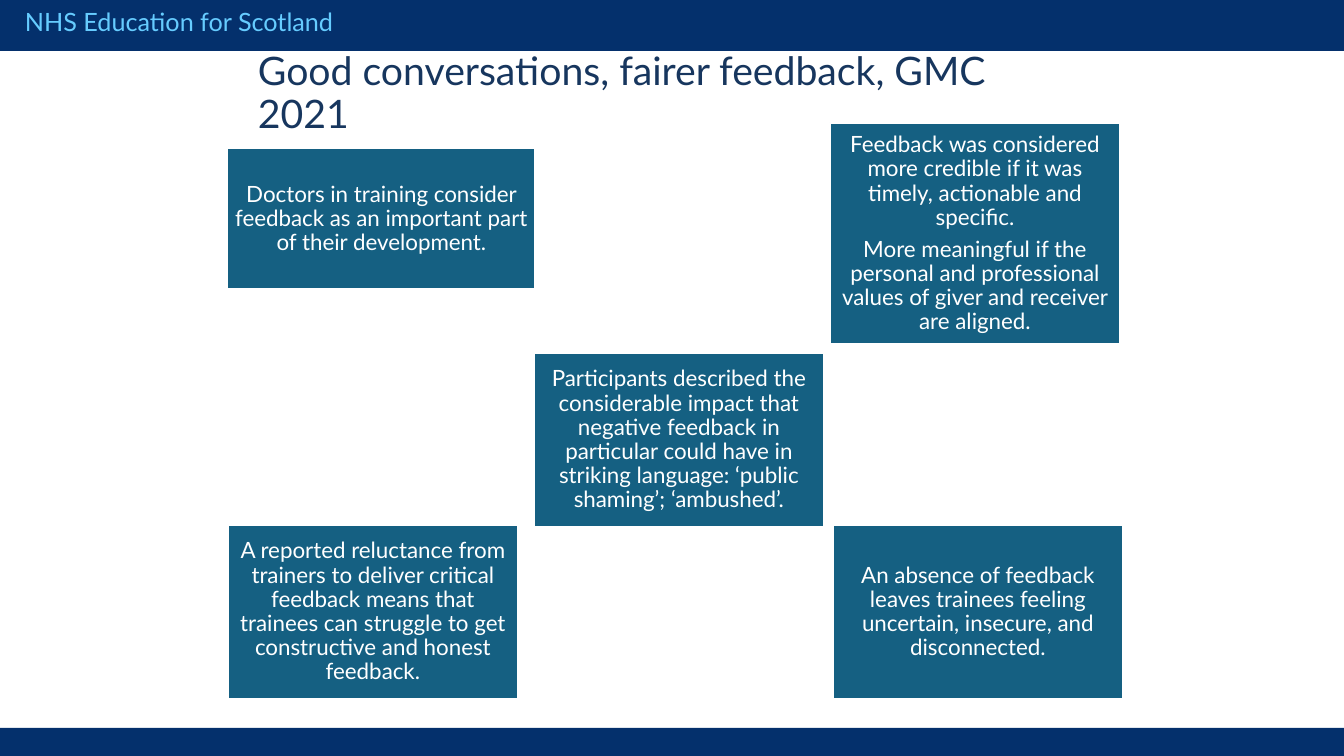
"""Build the slide on good conversations and fairer feedback."""
import pptx
import pptx.dml.color
import pptx.enum.shapes
import pptx.enum.text
import pptx.util

WIDE, HIGH = 1344, 756
SCALE = 914400 / 100.8
FONT = "Lato"
HUES = {
    "navy": "04306C",
    "sky": "66CCFF",
    "ink": "17365E",
    "teal": "156082",
    "white": "FFFFFF",
}
CARDS = [
    ((227, 148, 309, 142), [
        "Doctors in training consider feedback as an important part of their development."]),
    ((830, 123, 290, 222), [
        "Feedback was considered more credible if it was timely, actionable and specific.",
        "More meaningful if the personal and professional values of giver and receiver are aligned."]),
    ((228, 525, 290, 174), [
        "A reported reluctance from trainers to deliver critical feedback means that trainees "
        "can struggle to get constructive and honest feedback."]),
    ((534, 353, 290, 174), [
        "Participants described the considerable impact that negative feedback in particular "
        "could have in striking language: ‘public shaming’; ‘ambushed’."]),
    ((833, 525, 290, 174), [
        "An absence of feedback leaves trainees feeling uncertain, insecure, and\ndisconnected."]),
]


def px(num):
    return pptx.util.Emu(round(num * SCALE))


def hue(name):
    return pptx.dml.color.RGBColor.from_string(HUES[name])


class Deck:
    """Hold the style and the current slide."""

    def __init__(self):
        self.show = pptx.Presentation()
        self.show.slide_width, self.show.slide_height = px(WIDE), px(HIGH)
        self.slide = self.show.slides.add_slide(self.show.slide_layouts[6])

    def put(self, frame, lines, size, tint, align, space=1.0, after=0):
        frame.word_wrap = True
        for num, line in enumerate(lines):
            para = frame.add_paragraph() if num else frame.paragraphs[0]
            para.text = line
            para.alignment = align
            para.line_spacing = space
            para.space_after = pptx.util.Pt(after)
            para.font.name = FONT
            para.font.size = pptx.util.Pt(size)
            para.font.color.rgb = hue(tint)

    def rect(self, area, fill):
        kind = pptx.enum.shapes.MSO_SHAPE.RECTANGLE
        shape = self.slide.shapes.add_shape(kind, *map(px, area))
        shape.shadow.inherit = False
        shape.fill.solid()
        shape.fill.fore_color.rgb = hue(fill)
        shape.line.fill.background()
        return shape

    def label(self, area, text, size, tint, space=1.0, anchor="TOP"):
        frame = self.slide.shapes.add_textbox(*map(px, area)).text_frame
        frame.vertical_anchor = pptx.enum.text.MSO_ANCHOR[anchor]
        self.put(frame, [text], size, tint, pptx.enum.text.PP_ALIGN.LEFT, space)

    def card(self, area, lines):
        shape = self.rect(area, "teal")
        shape.line.color.rgb = hue("white")
        shape.line.width = pptx.util.Pt(2)
        frame = shape.text_frame
        frame.margin_left = frame.margin_right = px(7)
        frame.margin_top = frame.margin_bottom = px(7)
        frame.vertical_anchor = pptx.enum.text.MSO_ANCHOR.MIDDLE
        self.put(frame, lines, 16, "white", pptx.enum.text.PP_ALIGN.CENTER, 0.9, 5.6)


def main():
    deck = Deck()
    deck.rect((0, 0, WIDE, 51), "navy")
    deck.rect((0, 728, WIDE, 28), "navy")
    deck.label((15, 1, 571, 40), "NHS Education for Scotland", 18, "sky")
    deck.label((248, 56, 840, 77), "Good conversations, fairer feedback, GMC 2021",
               28, "ink", 0.9, "MIDDLE")
    for area, lines in CARDS:
        deck.card(area, lines)
    deck.show.save("out.pptx")


if __name__ == "__main__":
    main()
